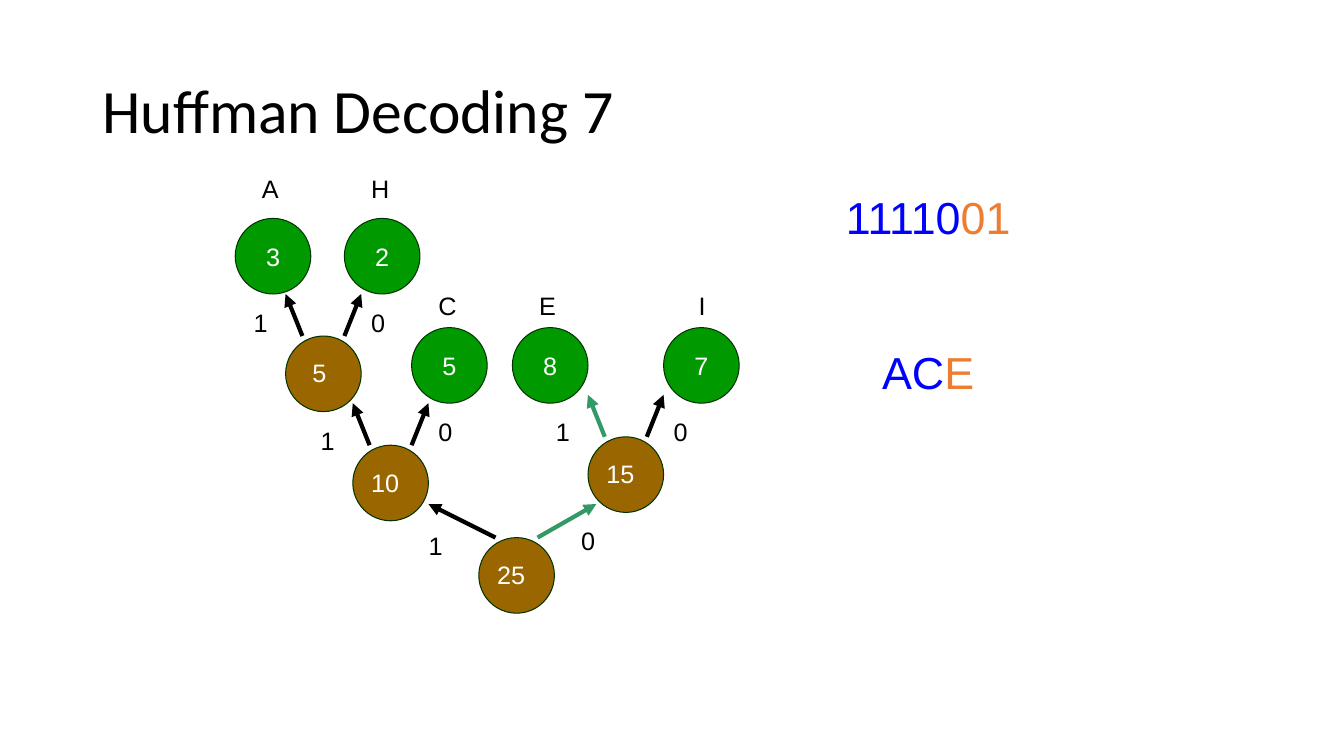
from pptx import Presentation
from pptx.dml.color import RGBColor
from pptx.enum.shapes import MSO_CONNECTOR as Link, MSO_SHAPE as Form
from pptx.enum.text import MSO_ANCHOR as Anchor, MSO_AUTO_SIZE as Fit, PP_ALIGN as Align
from pptx.oxml.ns import qn
from pptx.util import Pt
from lxml.etree import SubElement

BLACK = RGBColor(0x00, 0x00, 0x00)
WHITE = RGBColor(0xFF, 0xFF, 0xFF)
LEAF = RGBColor(0x00, 0x99, 0x00)
INNER = RGBColor(0x99, 0x66, 0x00)
RIM = RGBColor(0x00, 0x33, 0x00)
TRAIL = RGBColor(0x33, 0x99, 0x66)
BLUE = RGBColor(0x00, 0x00, 0xFF)
ORANGE = RGBColor(0xED, 0x7D, 0x31)

SIZE = 54
LEAVES = [
    ("A", "3", 0, 36, 12, -36),
    ("H", "2", 78, 36, 12, -36),
    ("C", "5", 126, 114, 12, -30),
    ("E", "8", 198, 114, 12, -30),
    ("I", "7", 306, 114, 18, -30),
]
NEAR, FAR = (0, -30), (54, -30)
NODES = [
    ("5", 36, 120, NEAR, FAR, (-30, -24), (54, -24), BLACK),
    ("10", 84, 198, NEAR, FAR, (-30, -18), (54, -24), BLACK),
    ("15", 252, 192, NEAR, FAR, (-30, -18), (54, -18), BLACK),
    ("25", 174, 264, (-36, -24), (84, -24), (-43, -9), (66, -12), BLACK),
]
TAKEN = {("15", "1"), ("25", "0")}


def write(para, text, font="Arial", size=18, color=BLACK, align=Align.LEFT):
    para.alignment = align
    run = para.add_run()
    run.text = text
    run.font.name = font
    run.font.size = Pt(size)
    run.font.color.rgb = color


def label(slide, text, x, y, color=BLACK):
    wide = {"I": 5}.get(text, 12 if text.isalpha() else 10 * len(text))
    box = slide.shapes.add_textbox(Pt(x), Pt(y), Pt(wide + 14.4), Pt(29))
    frame = box.text_frame
    frame.word_wrap = False
    frame.auto_size = Fit.SHAPE_TO_FIT_TEXT
    write(frame.paragraphs[0], text, color=color)


def circle(slide, x, y, fill):
    disc = slide.shapes.add_shape(Form.OVAL, Pt(x), Pt(y), Pt(SIZE), Pt(SIZE))
    disc.shadow.inherit = False
    disc.fill.solid()
    disc.fill.fore_color.rgb = fill
    disc.line.color.rgb = RIM
    disc.line.width = Pt(0.75)
    return disc


def arrow(slide, x, y, end, color):
    line = slide.shapes.add_connector(Link.STRAIGHT, Pt(x), Pt(y), Pt(end[0]), Pt(end[1]))
    line.line.color.rgb = color
    line.line.width = Pt(3)
    SubElement(line.line._get_or_add_ln(), qn("a:tailEnd"), type="triangle")
    SubElement(line._element.spPr, qn("a:effectLst"))


def header(slide, x, y, w, h):
    title = slide.shapes.title
    title.left, title.top, title.width, title.height = Pt(x), Pt(y), Pt(w), Pt(h)
    frame = title.text_frame
    frame.vertical_anchor = Anchor.MIDDLE
    para = frame.paragraphs[0]
    para.line_spacing = 0.9
    write(para, "Huffman Decoding 7", font="Calibri", size=44)


def tree(slide, left, top):
    for name, count, dx, dy, tagx, tagy in LEAVES:
        x, y = left + dx, top + dy
        frame = circle(slide, x, y, LEAF).text_frame
        frame.word_wrap = False
        frame.vertical_anchor = Anchor.MIDDLE
        write(frame.paragraphs[0], count, color=WHITE, align=Align.CENTER)
        label(slide, name, x + tagx, y + tagy)
    for count, dx, dy, one, zero, tag1, tag0, color in NODES:
        x, y = left + dx, top + dy
        circle(slide, x, y, INNER)
        label(slide, count, x + 18 - 6 * len(count), y + 12, color=WHITE)
        for bit, start, end, tag in (("1", 12, one, tag1), ("0", 42, zero, tag0)):
            hue = TRAIL if (count, bit) in TAKEN else color
            arrow(slide, x + start, y, (x + end[0], y + end[1]), hue)
            label(slide, bit, x + tag[0], y + tag[1])


def code(slide, x, y, w, h):
    frame = slide.shapes.add_textbox(Pt(x), Pt(y), Pt(w), Pt(h)).text_frame
    frame.word_wrap = True
    bits = frame.paragraphs[0]
    plain = frame.add_paragraph()
    plain.space_before = Pt(72)
    for para, done, now in ((bits, "11110", "01"), (plain, "AC", "E")):
        write(para, done, size=32, color=BLUE, align=Align.CENTER)
        write(para, now, size=32, color=ORANGE, align=Align.CENTER)


def main():
    deck = Presentation()
    deck.slide_width, deck.slide_height = Pt(960), Pt(540)
    slide = deck.slides.add_slide(deck.slide_layouts[5])
    header(slide, 66, 28.75, 828, 104.4)
    tree(slide, 168, 120)
    code(slide, 528, 132, 270, 160.5)
    deck.save("out.pptx")


if __name__ == "__main__":
    main()
